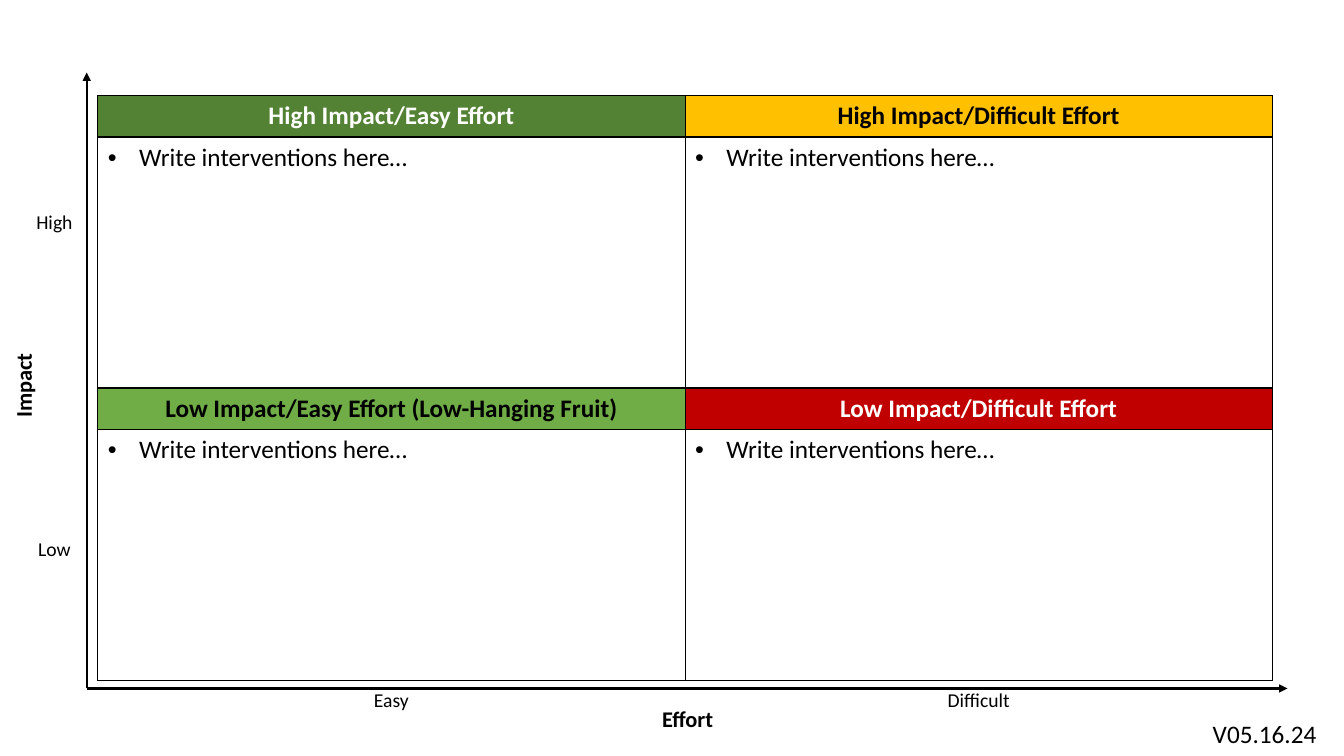
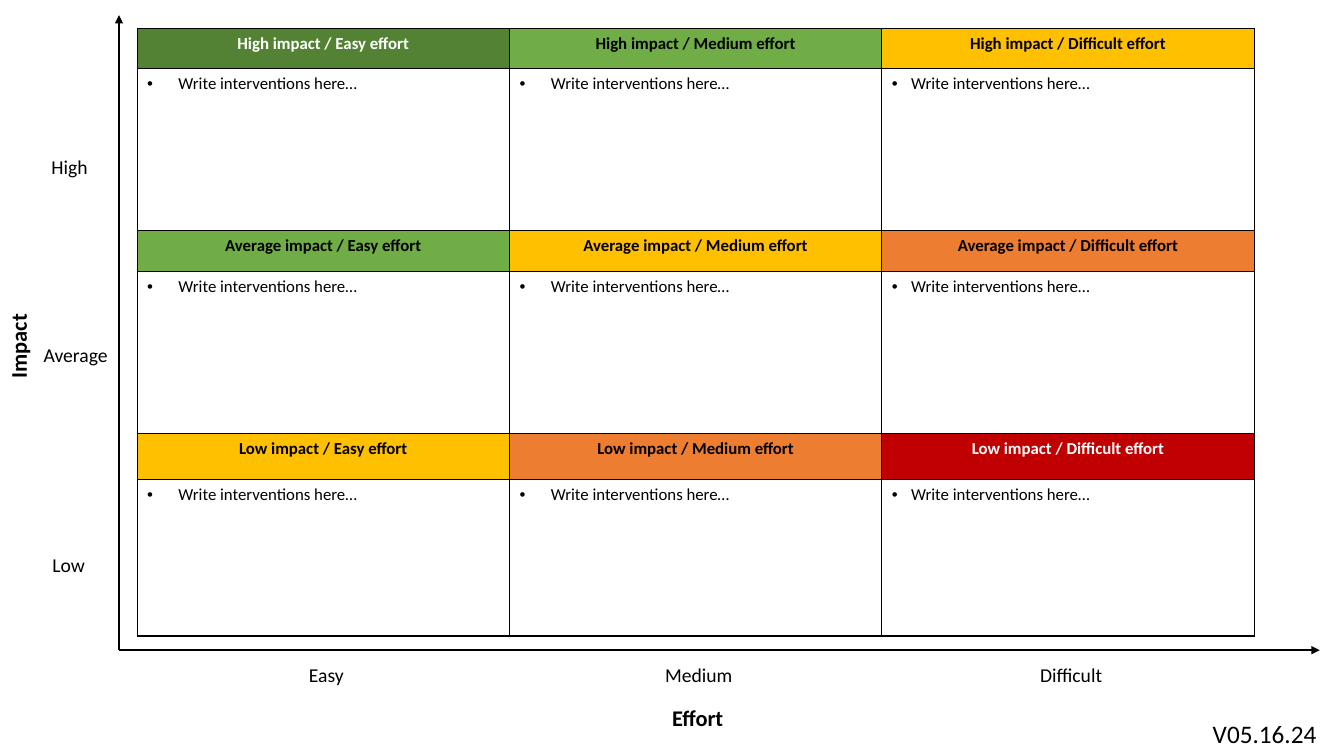
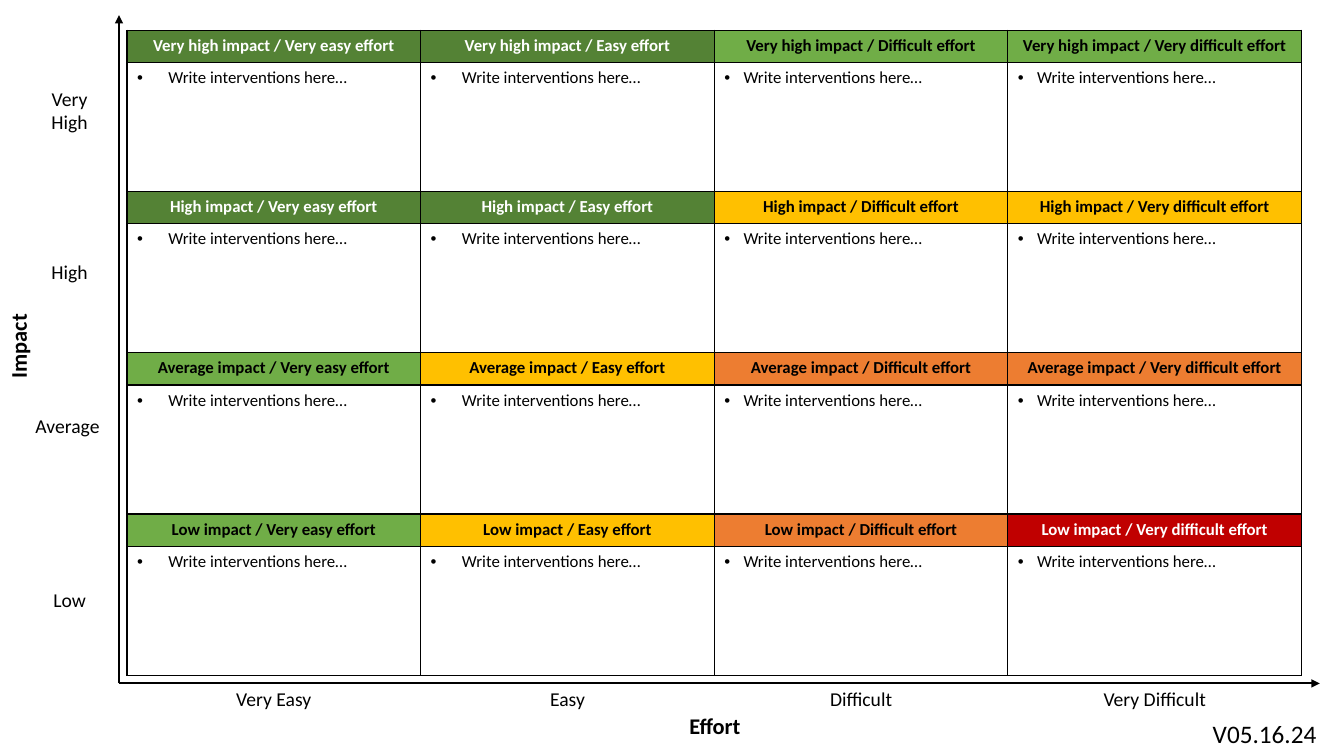
"""Build three impact/effort matrices: two by two, three by three and four by four."""
from lxml import etree
from pptx import Presentation
from pptx.dml.color import RGBColor
from pptx.enum.shapes import MSO_CONNECTOR
from pptx.enum.text import MSO_AUTO_SIZE, PP_ALIGN
from pptx.oxml.ns import qn
from pptx.util import Inches, Pt

STRAIGHT = MSO_CONNECTOR.STRAIGHT
CENTER, LEFT = PP_ALIGN.CENTER, PP_ALIGN.LEFT
GROW = MSO_AUTO_SIZE.SHAPE_TO_FIT_TEXT

BLACK = RGBColor(0x00, 0x00, 0x00)
WHITE = RGBColor(0xFF, 0xFF, 0xFF)
DARK_GREEN = RGBColor(0x54, 0x82, 0x35)
GREEN = RGBColor(0x70, 0xAD, 0x47)
YELLOW = RGBColor(0xFF, 0xC0, 0x00)
ORANGE = RGBColor(0xED, 0x7D, 0x31)
RED = RGBColor(0xC0, 0x00, 0x00)
WHITE_TEXT_FILLS = (DARK_GREEN, RED)

FONT = "Calibri"
VERSION = "V05.16.24"
PROMPT = "Write interventions here…"
AXIS_LENGTH = 11.91
LABEL_HEIGHT = 0.34
WIDE_INDENT, NARROW_INDENT = 0.31, 0.19

MATRICES = [
    {
        "heading": "{} Impact/{} Effort",
        "notes": {(1, 0): " (Low-Hanging Fruit)"},
        "size": 18,
        "fills": [[DARK_GREEN, YELLOW], [GREEN, RED]],
        "grid": (0.97, 0.95, 11.65, 2.9),
        "header_heights": [0.41, 0.41],
        "indents": [WIDE_INDENT] * 2,
        "axis": (0.86, 6.83, 0.72),
        "impact_title": (-0.25, 3.64, 0.96, 0.37),
        "effort_title": (6.44, 6.95, 0.76, 0.37),
        "impacts": [("High", 0.13, 2.03, 0.82), ("Low", 0.13, 5.28, 0.82)],
        "efforts": ["Easy", "Difficult"],
        "effort_start": (0.97, 6.78),
    },
    {
        "heading": "{} impact / {} effort",
        "notes": {},
        "size": 12,
        "fills": [
            [DARK_GREEN, GREEN, YELLOW],
            [GREEN, YELLOW, ORANGE],
            [YELLOW, ORANGE, RED],
        ],
        "grid": (1.36, 0.28, 11.08, 2.01),
        "header_heights": [0.4, 0.4, 0.46],
        "indents": [WIDE_INDENT] * 2 + [NARROW_INDENT],
        "axis": (1.18, 6.45, 0.15),
        "impact_title": (-0.3, 3.25, 0.96, 0.37),
        "effort_title": (6.44, 6.94, 0.96, 0.37),
        "impacts": [
            ("High", 0.28, 1.49, 0.82),
            ("Average", 0.31, 3.35, 0.88),
            ("Low", 0.27, 5.44, 0.82),
        ],
        "efforts": ["Easy", "Medium", "Difficult"],
        "effort_start": (1.39, 6.53),
    },
    {
        "heading": "{} impact / {} effort",
        "notes": {},
        "size": 12,
        "fills": [
            [DARK_GREEN, DARK_GREEN, GREEN, GREEN],
            [DARK_GREEN, DARK_GREEN, YELLOW, YELLOW],
            [GREEN, YELLOW, ORANGE, ORANGE],
            [GREEN, YELLOW, ORANGE, RED],
        ],
        "grid": (1.26, 0.3, 11.65, 1.6),
        "header_heights": [0.32] * 4,
        "indents": [WIDE_INDENT] * 2 + [NARROW_INDENT] * 2,
        "axis": (1.18, 6.78, 0.15),
        "impact_title": (-0.3, 3.25, 0.96, 0.37),
        "effort_title": (6.61, 7.02, 0.96, 0.37),
        "impacts": [
            ("Very High", 0.28, 0.81, 0.82),
            ("High", 0.28, 2.53, 0.82),
            ("Average", 0.23, 4.06, 0.88),
            ("Low", 0.28, 5.78, 0.82),
        ],
        "efforts": ["Very Easy", "Easy", "Difficult", "Very Difficult"],
        "effort_start": (1.26, 6.77),
    },
]


def write(frame, text, size, color=BLACK, bold=False, align=CENTER):
    """Put one formatted run into a text frame and return its paragraph."""
    para = frame.paragraphs[0]
    para.alignment = align
    span = para.add_run()
    span.text = text
    span.font.name = FONT
    span.font.size = Pt(size)
    span.font.bold = bold
    span.font.color.rgb = color
    return para


def add_label(page, text, place, size=14, bold=False, align=CENTER):
    """Add a text box at (left, top, width, height) in inches."""
    box = page.shapes.add_textbox(*map(Inches, place))
    box.text_frame.word_wrap = True
    box.text_frame.auto_size = GROW
    write(box.text_frame, text, size, bold=bold, align=align)
    return box


def add_arrow(page, start, end):
    """Draw a black axis with an arrowhead at its end."""
    arrow = page.shapes.add_connector(STRAIGHT, *map(Inches, start + end))
    arrow.line.color.rgb = BLACK
    arrow.line.width = Pt(1.5)
    properties = arrow.element.spPr
    etree.SubElement(properties.find(qn("a:ln")), qn("a:tailEnd"), type="triangle")
    etree.SubElement(properties, qn("a:effectLst"))


def style_cell(cell, fill):
    """Give a cell a thin black border and a solid fill."""
    properties = cell._tc.get_or_add_tcPr()
    for side in ("a:lnL", "a:lnR", "a:lnT", "a:lnB"):
        line = etree.SubElement(properties, qn(side), w=str(Pt(1)))
        solid = etree.SubElement(line, qn("a:solidFill"))
        etree.SubElement(solid, qn("a:srgbClr"), val=str(BLACK))
    cell.fill.solid()
    cell.fill.fore_color.rgb = fill


def add_bullet(para, indent):
    """Turn a paragraph into a bullet with a hanging indent."""
    properties = para._p.get_or_add_pPr()
    properties.set("marL", str(Inches(indent)))
    properties.set("indent", str(-Inches(indent)))
    etree.SubElement(properties, qn("a:buFont"), typeface="Arial")
    etree.SubElement(properties, qn("a:buChar"), char="•")


def add_band(page, matrix, row):
    """Add the table for one impact level: coloured headings over open cells."""
    left, top, width, height = matrix["grid"]
    efforts = matrix["efforts"]
    place = (left, top + row * height, width, height)
    table = page.shapes.add_table(2, len(efforts), *map(Inches, place)).table
    table.first_row = table.horz_banding = False
    header_height = matrix["header_heights"][row]
    table.rows[0].height = Inches(header_height)
    table.rows[1].height = Inches(height - header_height)
    impact = matrix["impacts"][row][0].capitalize()
    for column, effort in enumerate(efforts):
        table.columns[column].width = Inches(width / len(efforts))
        fill = matrix["fills"][row][column]
        heading = matrix["heading"].format(impact, effort.capitalize())
        heading += matrix["notes"].get((row, column), "")
        header, body = table.cell(0, column), table.cell(1, column)
        style_cell(header, fill)
        style_cell(body, WHITE)
        color = WHITE if fill in WHITE_TEXT_FILLS else BLACK
        write(header.text_frame, heading, matrix["size"], color, bold=True)
        para = write(body.text_frame, PROMPT, matrix["size"], align=LEFT)
        add_bullet(para, matrix["indents"][column])


def add_matrix(page, matrix):
    """Draw the axes, their labels and the bands of one matrix."""
    axis_left, axis_bottom, axis_top = matrix["axis"]
    origin = (axis_left, axis_bottom)
    add_arrow(page, origin, (axis_left, axis_top))
    add_arrow(page, origin, (axis_left + AXIS_LENGTH, axis_bottom))
    add_label(page, "Impact", matrix["impact_title"], 16, bold=True).rotation = 270
    add_label(page, "Effort", matrix["effort_title"], 16, bold=True)
    for row, (impact, left, top, width) in enumerate(matrix["impacts"]):
        lines = 2 if " " in impact else 1
        add_label(page, impact, (left, top, width, LABEL_HEIGHT + 0.23 * (lines - 1)))
        add_band(page, matrix, row)
    left, top = matrix["effort_start"]
    pitch = matrix["grid"][2] / len(matrix["efforts"])
    for column, effort in enumerate(matrix["efforts"]):
        add_label(page, effort, (left + column * pitch, top, pitch, LABEL_HEIGHT))


def main():
    """Assemble and save the deck."""
    deck = Presentation()
    deck.slide_width, deck.slide_height = Inches(13.33), Inches(7.5)
    layout = deck.slide_layouts.get_by_name("Blank")
    pages = [deck.slides.add_slide(layout) for _ in MATRICES]
    version = add_label(pages[0], VERSION, (11.93, 7.08, 1.47, 0.4), 18, align=LEFT)
    layout.shapes.element.append(version.element)
    for page, matrix in zip(pages, MATRICES):
        add_matrix(page, matrix)
    deck.save("out.pptx")


if __name__ == "__main__":
    main()
